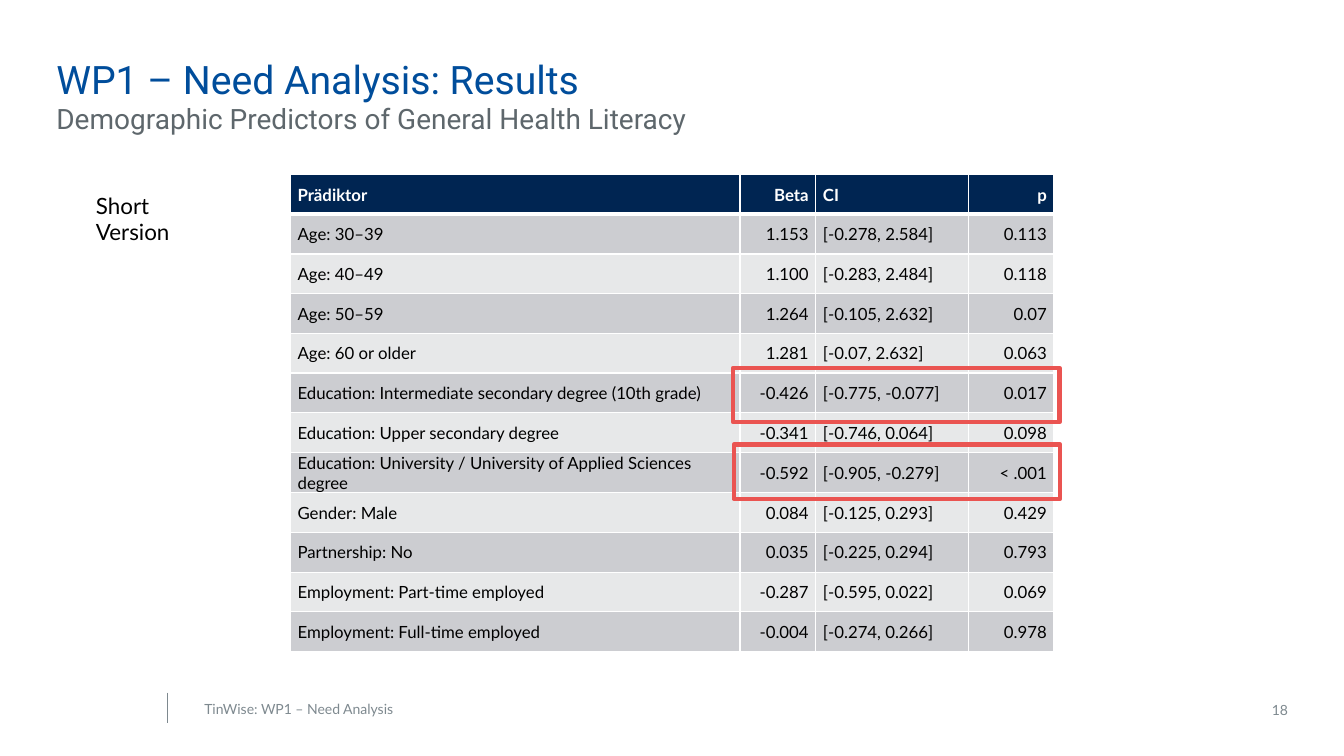
from pptx import Presentation
from pptx.dml.color import RGBColor
from pptx.enum import shapes, text
from pptx.oxml import parse_xml
from pptx.oxml.ns import nsdecls
from pptx.oxml.xmlchemy import OxmlElement
from pptx.util import Cm, Pt

BLUE = RGBColor(0x00, 0x4D, 0x9B)
NAVY = RGBColor(0x00, 0x25, 0x52)
SLATE = RGBColor(0x5E, 0x67, 0x6C)
GREY = RGBColor(0x7E, 0x89, 0x8F)
DARK_BAND = RGBColor(0xCC, 0xCD, 0xD1)
LIGHT_BAND = RGBColor(0xE7, 0xE8, 0xE9)
RED = RGBColor(0xEA, 0x54, 0x51)
BLACK = RGBColor(0, 0, 0)
WHITE = RGBColor(255, 255, 255)

LEFT, RIGHT = text.PP_ALIGN.LEFT, text.PP_ALIGN.RIGHT
TOP, MIDDLE = text.MSO_ANCHOR.TOP, text.MSO_ANCHOR.MIDDLE

TABLE_LEFT, TABLE_TOP, ROW_HEIGHT = 7.32, 4.4, 1
COLUMN_WIDTHS = (11.33, 1.91, 3.84, 2.16)
COLUMN_ALIGNS = (LEFT, RIGHT, LEFT, RIGHT)
PREDICTORS = (
    ("Prädiktor", "Beta", "CI", "p"),
    ("Age: 30–39", "1.153", "[-0.278, 2.584]", "0.113"),
    ("Age: 40–49", "1.100", "[-0.283, 2.484]", "0.118"),
    ("Age: 50–59", "1.264", "[-0.105, 2.632]", "0.07"),
    ("Age: 60 or older", "1.281", "[-0.07, 2.632]", "0.063"),
    ("Education: Intermediate secondary degree (10th grade)",
     "-0.426", "[-0.775, -0.077]", "0.017"),
    ("Education: Upper secondary degree", "-0.341", "[-0.746, 0.064]", "0.098"),
    ("Education: University / University of Applied Sciences degree",
     "-0.592", "[-0.905, -0.279]", "< .001"),
    ("Gender: Male", "0.084", "[-0.125, 0.293]", "0.429"),
    ("Partnership: No", "0.035", "[-0.225, 0.294]", "0.793"),
    ("Employment: Part-time employed", "-0.287", "[-0.595, 0.022]", "0.069"),
    ("Employment: Full-time employed", "-0.004", "[-0.274, 0.266]", "0.978"),
)


def style_paragraph(para, font_name, size, color, align=LEFT, bold=False):
    para.alignment = align
    for span in para.runs:
        span.font.name = font_name
        span.font.size = Pt(size)
        span.font.color.rgb = color
        span.font.bold = bold


def add_text(page, words, place, font_name, size, color,
             align=LEFT, anchor=TOP, inset=0):
    box = page.shapes.add_textbox(*map(Cm, place))
    frame = box.text_frame
    frame.word_wrap = True
    frame.vertical_anchor = anchor
    frame.margin_left = frame.margin_right = Cm(inset)
    frame.margin_top = frame.margin_bottom = Cm(inset / 2)
    frame.text = words
    style_paragraph(frame.paragraphs[0], font_name, size, color, align)


def add_borders(cell, bottom_width):
    """Draw white cell edges, 1 pt wide except for the bottom one."""
    properties = cell._tc.get_or_add_tcPr()
    for side, width in (("L", 1), ("R", 1), ("T", 1), ("B", bottom_width)):
        properties.append(parse_xml(
            f'<a:ln{side} {nsdecls("a")} w="{Pt(width)}"><a:solidFill>'
            f'<a:srgbClr val="{WHITE}"/></a:solidFill></a:ln{side}>'))


def fill_cell(cell, words, align, fill, color, is_header):
    cell.margin_left = cell.margin_right = Cm(0.18)
    cell.margin_top = cell.margin_bottom = 0
    cell.vertical_anchor = MIDDLE
    add_borders(cell, 3 if is_header else 1)
    cell.fill.solid()
    cell.fill.fore_color.rgb = fill
    cell.text = words
    style_paragraph(cell.text_frame.paragraphs[0], "Lato", 12, color, align, is_header)


def add_predictor_table(page):
    table = page.shapes.add_table(
        len(PREDICTORS), len(COLUMN_WIDTHS), Cm(TABLE_LEFT), Cm(TABLE_TOP),
        Cm(sum(COLUMN_WIDTHS)), Cm(ROW_HEIGHT * len(PREDICTORS))).table
    for column, width in zip(table.columns, COLUMN_WIDTHS):
        column.width = Cm(width)
    for row, values in enumerate(PREDICTORS):
        table.rows[row].height = Cm(ROW_HEIGHT)
        is_header = row == 0
        fill = NAVY if is_header else DARK_BAND if row % 2 else LIGHT_BAND
        color = WHITE if is_header else BLACK
        for column, (words, align) in enumerate(zip(values, COLUMN_ALIGNS)):
            fill_cell(table.cell(row, column), words, align, fill, color, is_header)


def add_highlight(page, left, top):
    frame = page.shapes.add_shape(
        shapes.MSO_SHAPE.RECTANGLE, Cm(left), Cm(top), Cm(8.23), Cm(1.37))
    frame.shadow.inherit = False
    frame.fill.background()
    frame.line.color.rgb = RED
    frame.line.width = Pt(3)


def add_footer_rule(page):
    rule = page.shapes.add_connector(
        shapes.MSO_CONNECTOR.STRAIGHT, Cm(4.22), Cm(17.45), Cm(4.22), Cm(18.21))
    rule.line.color.rgb = GREY
    rule.line.width = Pt(1)
    rule._element.spPr.append(OxmlElement("a:effectLst"))


def main():
    deck = Presentation()
    deck.slide_width, deck.slide_height = Cm(33.87), Cm(19.05)
    page = deck.slides.add_slide(deck.slide_layouts[6])

    add_footer_rule(page)
    add_text(page, "WP1 – Need Analysis: Results",
             (1.42, 1.4, 25.37, 1.12), "Roboto", 28, BLUE)
    add_text(page, "Demographic Predictors of General Health Literacy",
             (1.42, 2.57, 25.37, 0.69), "Roboto", 20, SLATE)
    add_text(page, "18", (24.84, 17.53, 7.62, 0.71), "Lato", 10, GREY, RIGHT, MIDDLE)
    add_text(page, "TinWise: WP1 – Need Analysis",
             (4.9, 17.53, 11.43, 0.71), "Lato", 10, GREY, inset=0.25)
    add_predictor_table(page)
    add_highlight(page, 18.49, 11.2)
    add_text(page, "Short Version", (2.42, 4.83, 3.15, 0.69), "Lato", 16, BLACK)
    add_highlight(page, 18.47, 9.27)

    deck.save("out.pptx")


if __name__ == "__main__":
    main()
